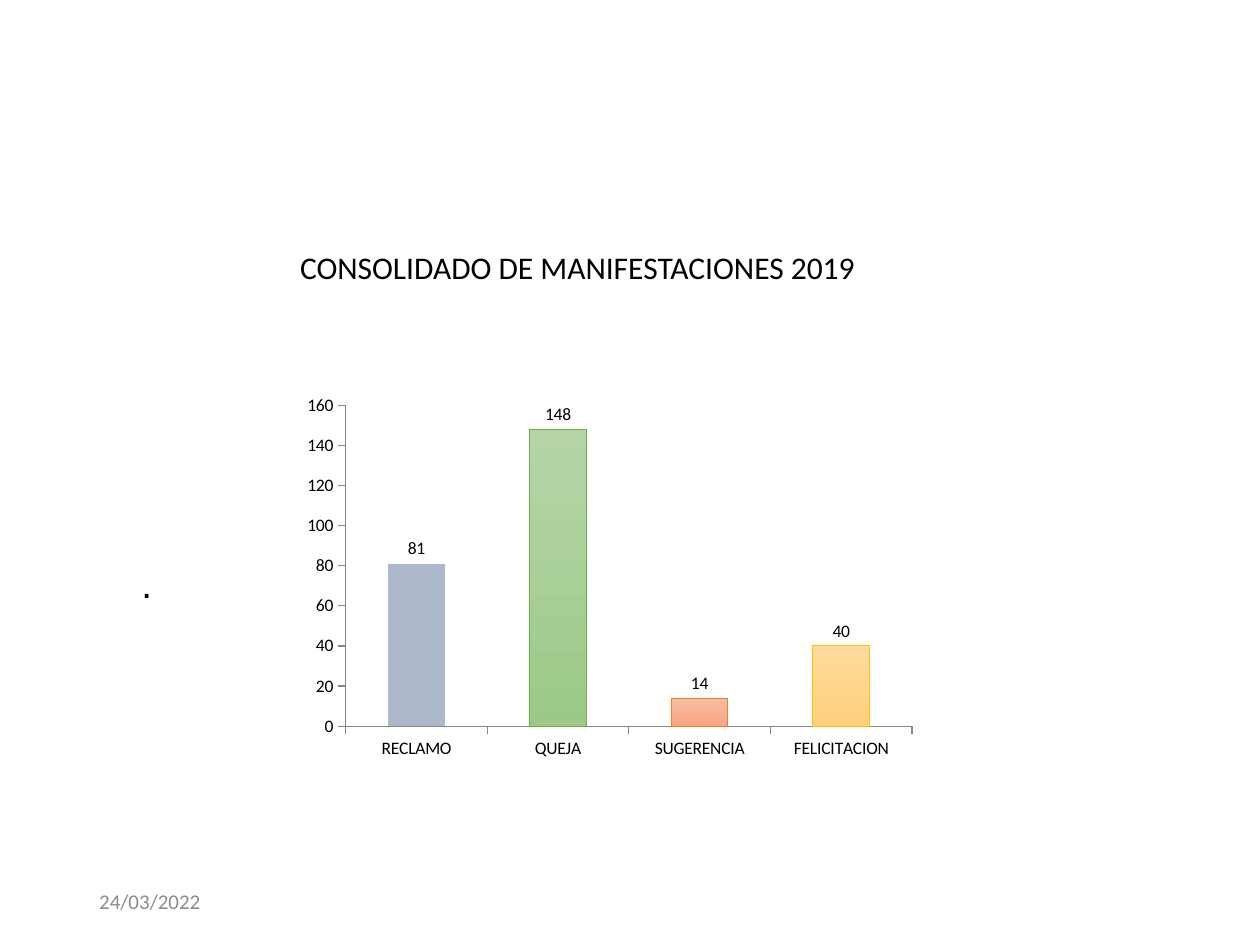
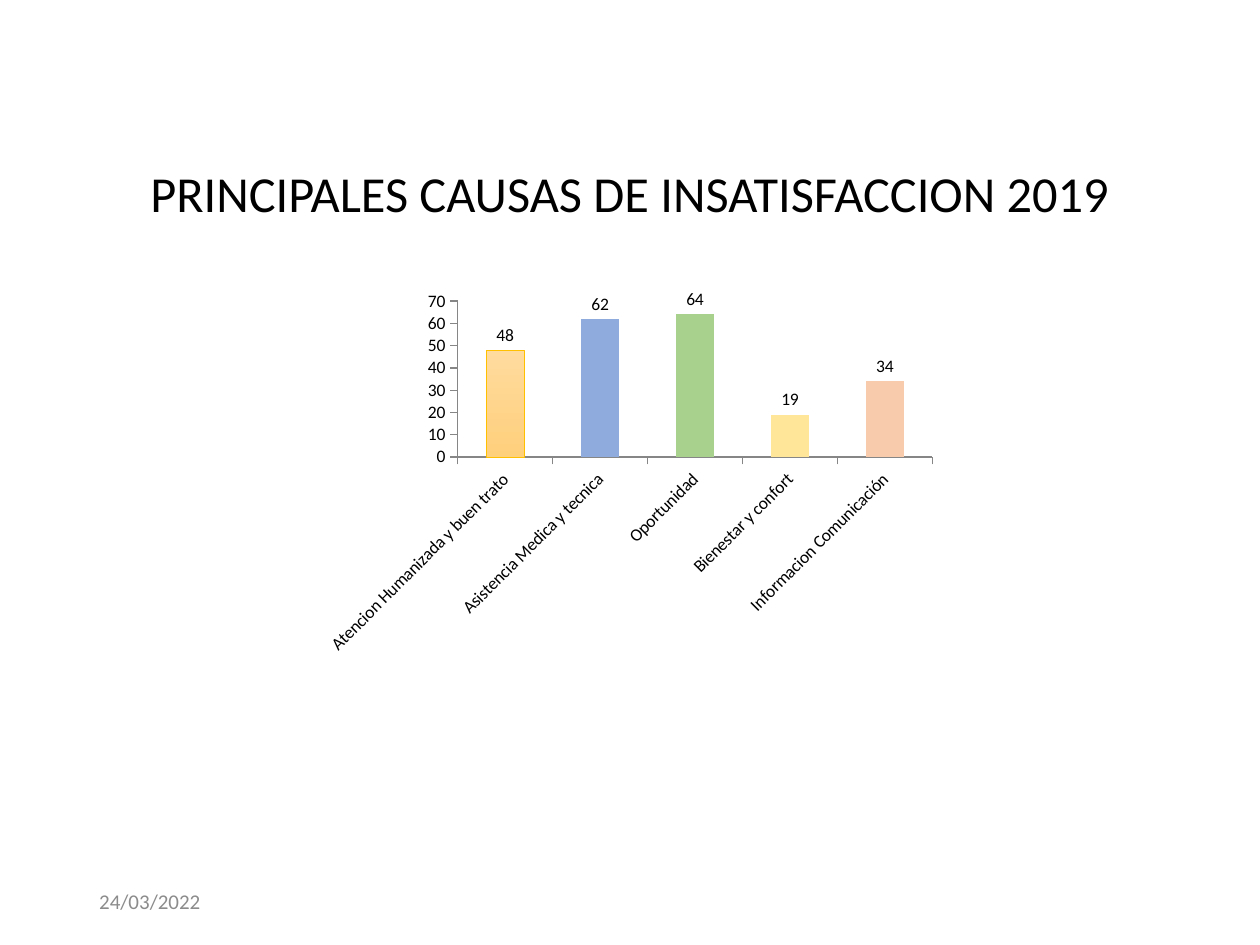
from pptx import Presentation
from pptx.chart.data import CategoryChartData
from pptx.dml.color import RGBColor
from pptx.enum.chart import XL_CHART_TYPE, XL_LABEL_POSITION, XL_TICK_MARK
from pptx.enum.text import MSO_ANCHOR, MSO_AUTO_SIZE, PP_ALIGN
from pptx.util import Cm, Pt

BLACK = RGBColor(0x00, 0x00, 0x00)
DATE_GRAY = RGBColor(0x8C, 0x8C, 0x8C)
AXIS_GRAY = RGBColor(0x86, 0x86, 0x86)
STEEL = RGBColor(0xAD, 0xB9, 0xCA)
BLUE = RGBColor(0x8F, 0xAA, 0xDC)
GREEN = RGBColor(0xA9, 0xD1, 0x8E)
YELLOW = RGBColor(0xFF, 0xE6, 0x99)
PEACH = RGBColor(0xF8, 0xCB, 0xAD)

# Gradient bars: top colour, bottom colour, outline
GREEN_FADE = (RGBColor(0xB5, 0xD5, 0xA7), RGBColor(0x9C, 0xC9, 0x87), RGBColor(0x70, 0xAD, 0x47))
ORANGE_FADE = (RGBColor(0xF7, 0xBD, 0xA5), RGBColor(0xF8, 0xA5, 0x82), RGBColor(0xED, 0x7D, 0x31))
GOLD_FADE = (RGBColor(0xFF, 0xDB, 0x9E), RGBColor(0xFF, 0xD0, 0x7C), RGBColor(0xFF, 0xC0, 0x00))

FONT = "Calibri"
DATE = "24/03/2022"
TITLE_ONLY = 5


class Report:
    def __init__(self):
        self.deck = Presentation()
        self.deck.slide_width, self.deck.slide_height = Cm(25.4), Cm(19.05)
        self.page = None

    def new_page(self):
        layout = self.deck.slide_layouts[TITLE_ONLY]
        self.page = self.deck.slides.add_slide(layout)

    def set_text(self, shape, text, size, color=BLACK, font=FONT,
                 align=PP_ALIGN.LEFT, anchor=MSO_ANCHOR.TOP):
        frame = shape.text_frame
        frame.word_wrap = True
        frame.auto_size = MSO_AUTO_SIZE.NONE
        frame.vertical_anchor = anchor
        para = frame.paragraphs[0]
        para.text = text
        para.alignment = align
        para.font.name, para.font.size = font, Pt(size)
        para.font.color.rgb = color
        return frame

    def title(self, text, left, top, width, height, size, **style):
        box = self.page.shapes.title
        box.left, box.top, box.width, box.height = map(Cm, (left, top, width, height))
        frame = self.set_text(box, text, size, anchor=MSO_ANCHOR.BOTTOM, **style)
        frame.paragraphs[0].line_spacing = 0.9
        return frame

    def text(self, text, left, top, width, height, size, **style):
        box = self.page.shapes.add_textbox(*map(Cm, (left, top, width, height)))
        return self.set_text(box, text, size, **style)

    def date(self):
        self.text(DATE, 1.75, 17.65, 5.72, 1.02, 12,
                  color=DATE_GRAY, anchor=MSO_ANCHOR.MIDDLE)

    def paint_bar(self, bar, paint):
        if isinstance(paint, RGBColor):
            bar.fill.solid()
            bar.fill.fore_color.rgb = paint
            return
        top_color, bottom_color, outline = paint
        bar.fill.gradient()
        bar.fill.gradient_angle = 270
        for stop, color in zip(bar.fill.gradient_stops, (top_color, bottom_color)):
            stop.color.rgb = color
        bar.line.color.rgb = outline
        bar.line.width = Pt(0.5)

    def column_chart(self, bars, left, top, maximum, step):
        data = CategoryChartData()
        data.categories = [name for name, _, _ in bars]
        data.add_series("Series 1", [value for _, value, _ in bars])
        chart = self.page.shapes.add_chart(
            XL_CHART_TYPE.COLUMN_CLUSTERED,
            Cm(left), Cm(top), Cm(12.7), Cm(7.62), data).chart
        chart.has_legend = chart.has_title = False
        chart.font.name, chart.font.size = FONT, Pt(10)
        chart.font.color.rgb = BLACK

        # Axes
        for axis in (chart.category_axis, chart.value_axis):
            axis.has_major_gridlines = False
            axis.major_tick_mark = XL_TICK_MARK.OUTSIDE
            axis.format.line.color.rgb = AXIS_GRAY
            axis.format.line.width = Pt(0.75)
        chart.value_axis.minimum_scale = 0
        chart.value_axis.maximum_scale = maximum
        chart.value_axis.major_unit = step

        # Bars and their values
        plot = chart.plots[0]
        plot.gap_width = 150
        plot.vary_by_categories = False
        plot.has_data_labels = True
        plot.data_labels.show_value = True
        plot.data_labels.position = XL_LABEL_POSITION.OUTSIDE_END
        for index, (_, _, paint) in enumerate(bars):
            self.paint_bar(plot.series[0].points[index].format, paint)


def main():
    report = Report()

    # Totals by kind of statement
    report.new_page()
    frame = report.title(".", 1.96, 4.09, 21.44, 9.25, 22, font="Arial")
    frame.margin_left, frame.margin_bottom = Cm(0.89), Cm(1.1)
    report.date()
    report.text("CONSOLIDADO DE MANIFESTACIONES 2019", 5.8, 4.88, 17.8, 1.02, 18)
    report.column_chart([
        ("RECLAMO", 81, STEEL),
        ("QUEJA", 148, GREEN_FADE),
        ("SUGERENCIA", 14, ORANGE_FADE),
        ("FELICITACION", 40, GOLD_FADE),
    ], 5.94, 7.82, maximum=160, step=20)

    # Causes of dissatisfaction
    report.new_page()
    report.title("PRINCIPALES CAUSAS DE INSATISFACCION 2019",
                 1.9, 2.34, 21.6, 2.29, 28.8, align=PP_ALIGN.CENTER)
    report.date()
    report.column_chart([
        ("Atencion Humanizada y buen trato", 48, GOLD_FADE),
        ("Asistencia Medica y tecnica", 62, BLUE),
        ("Oportunidad", 64, GREEN),
        ("Bienestar y confort", 19, YELLOW),
        ("Informacion Comunicación", 34, PEACH),
    ], 6.35, 5.72, maximum=70, step=10)

    report.deck.save("out.pptx")


if __name__ == "__main__":
    main()
